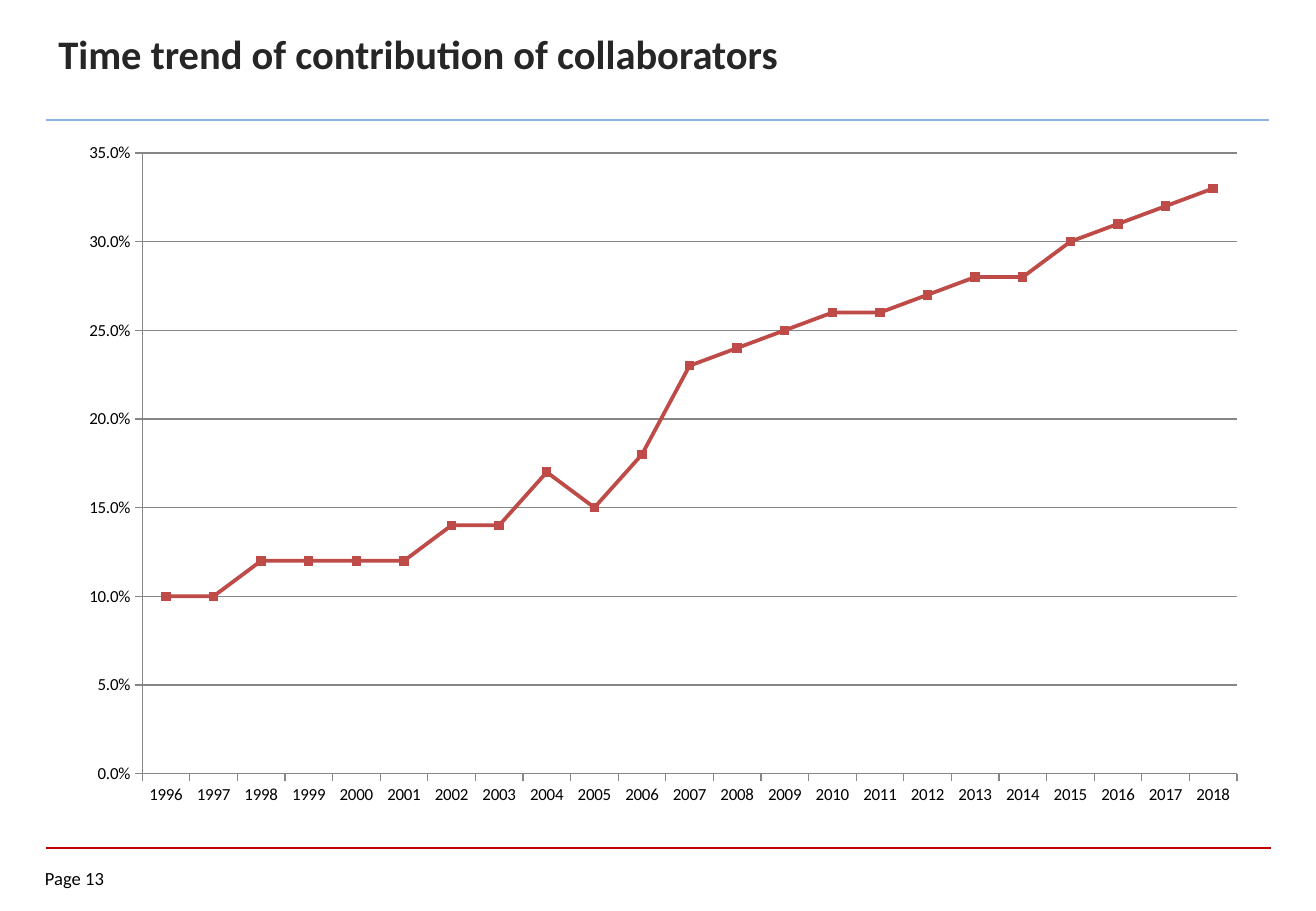
from lxml.etree import SubElement
from pptx import Presentation
from pptx.chart.data import CategoryChartData
from pptx.dml.color import RGBColor
from pptx.enum.chart import XL_CHART_TYPE, XL_MARKER_STYLE, XL_TICK_MARK
from pptx.enum.shapes import MSO_CONNECTOR
from pptx.enum.text import MSO_ANCHOR, PP_ALIGN
from pptx.oxml import parse_xml
from pptx.oxml.ns import nsdecls, qn
from pptx.util import Inches, Pt

WIDTH, HEIGHT = 10.83, 7.5
MARGIN = 0.38
FONT = "Calibri"
TREND_RED, GRID_GREY = "BE4B48", "868686"
FIRST_YEAR = 1996
SHARES = [
    0.1, 0.1, 0.12, 0.12, 0.12, 0.12, 0.14, 0.14, 0.17, 0.15, 0.18, 0.23,
    0.24, 0.25, 0.26, 0.26, 0.27, 0.28, 0.28, 0.3, 0.31, 0.32, 0.33,
]
CHART_WIDTH, CHART_HEIGHT = 9.84, 5.67
# Plot area as shares of the chart frame
PLOT_AREA = {"x": 0.64 / CHART_WIDTH, "y": 0.19 / CHART_HEIGHT,
             "w": 9.01 / CHART_WIDTH, "h": 5.11 / CHART_HEIGHT}


def rgb(code):
    return RGBColor.from_string(code)


def apply(target, formats):
    for name, value in formats.items():
        setattr(target, name, value)


def style_font(font, size, color, bold=False):
    apply(font, {"name": FONT, "size": Pt(size), "bold": bold})
    font.color.rgb = rgb(color)


def style_line(line, color, width):
    line.color.rgb = rgb(color)
    line.width = Pt(width)


def place(box, left, top, width, height):
    apply(box, {"left": Inches(left), "top": Inches(top),
                "width": Inches(width), "height": Inches(height)})


def write(box, text, size, color, bold=False, **frame_formats):
    frame = box.text_frame
    apply(frame, {"word_wrap": True, "vertical_anchor": MSO_ANCHOR.TOP, **frame_formats})
    frame.text = text
    paragraph = frame.paragraphs[0]
    paragraph.alignment = PP_ALIGN.LEFT
    style_font(paragraph.runs[0].font, size, color, bold)


def add_rule(slide, top, right, color, width):
    rule = slide.shapes.add_connector(
        MSO_CONNECTOR.STRAIGHT, Inches(MARGIN), Inches(top), Inches(right), Inches(top))
    style_line(rule.line, color, width)
    SubElement(rule._element.spPr, qn("a:effectLst"))


def fix_plot_area(chart):
    edges = "".join(f'<c:{side}Mode val="edge"/>' for side in "xy")
    sizes = "".join(f'<c:{side} val="{share}"/>' for side, share in PLOT_AREA.items())
    layout = parse_xml(
        f'<c:layout {nsdecls("c")}><c:manualLayout><c:layoutTarget val="inner"/>'
        f'{edges}{sizes}</c:manualLayout></c:layout>')
    plot_area = chart._chartSpace.chart.plotArea
    for automatic in plot_area.findall(qn("c:layout")):
        plot_area.remove(automatic)
    plot_area.insert(0, layout)


def add_trend_chart(slide, left, top):
    data = CategoryChartData(number_format="0.0%")
    data.categories = [str(FIRST_YEAR + step) for step in range(len(SHARES))]
    data.add_series("Series 1", SHARES)
    chart = slide.shapes.add_chart(
        XL_CHART_TYPE.LINE_MARKERS, Inches(left), Inches(top),
        Inches(CHART_WIDTH), Inches(CHART_HEIGHT), data).chart
    apply(chart, {"has_legend": False, "has_title": False})
    style_font(chart.font, 10, "000000")
    fix_plot_area(chart)

    # Axes
    years, percent = chart.category_axis, chart.value_axis
    for axis in (years, percent):
        apply(axis, {"major_tick_mark": XL_TICK_MARK.OUTSIDE,
                     "minor_tick_mark": XL_TICK_MARK.NONE})
        style_line(axis.format.line, GRID_GREY, 0.75)
    apply(percent, {"minimum_scale": 0, "maximum_scale": 0.35, "major_unit": 0.05,
                    "has_major_gridlines": True})
    apply(percent.tick_labels, {"number_format": "0.0%", "number_format_is_linked": False})
    style_line(percent.major_gridlines.format.line, GRID_GREY, 0.75)

    # Trend line
    plot = chart.plots[0]
    plot.vary_by_categories = False
    trend = plot.series[0]
    trend.smooth = False
    style_line(trend.format.line, TREND_RED, 2.25)
    apply(trend.marker, {"style": XL_MARKER_STYLE.SQUARE, "size": 5})
    trend.marker.format.fill.solid()
    trend.marker.format.fill.fore_color.rgb = rgb(TREND_RED)
    style_line(trend.marker.format.line, TREND_RED, 0.75)


def main():
    prs = Presentation()
    apply(prs, {"slide_width": Inches(WIDTH), "slide_height": Inches(HEIGHT)})
    slide = prs.slides.add_slide(prs.slide_layouts[5])

    # Header
    title = slide.shapes.title
    place(title, MARGIN, 0.19, 7.56, 0.71)
    write(title, "Time trend of contribution of collaborators", 24, "262626", bold=True)
    add_rule(slide, 0.99, 10.44, "8EB4E3", 1.5)

    # Chart
    add_trend_chart(slide, 0.53, 1.07)

    # Footer
    add_rule(slide, 6.98, 10.46, "C00000", 1)
    page = slide.shapes.add_textbox(Inches(0.37), Inches(7.14), Inches(0.73), Inches(0.22))
    write(page, "Page 13", 11, "000000", margin_left=0, margin_right=0,
          margin_top=0, margin_bottom=0)

    prs.save("out.pptx")


if __name__ == "__main__":
    main()
